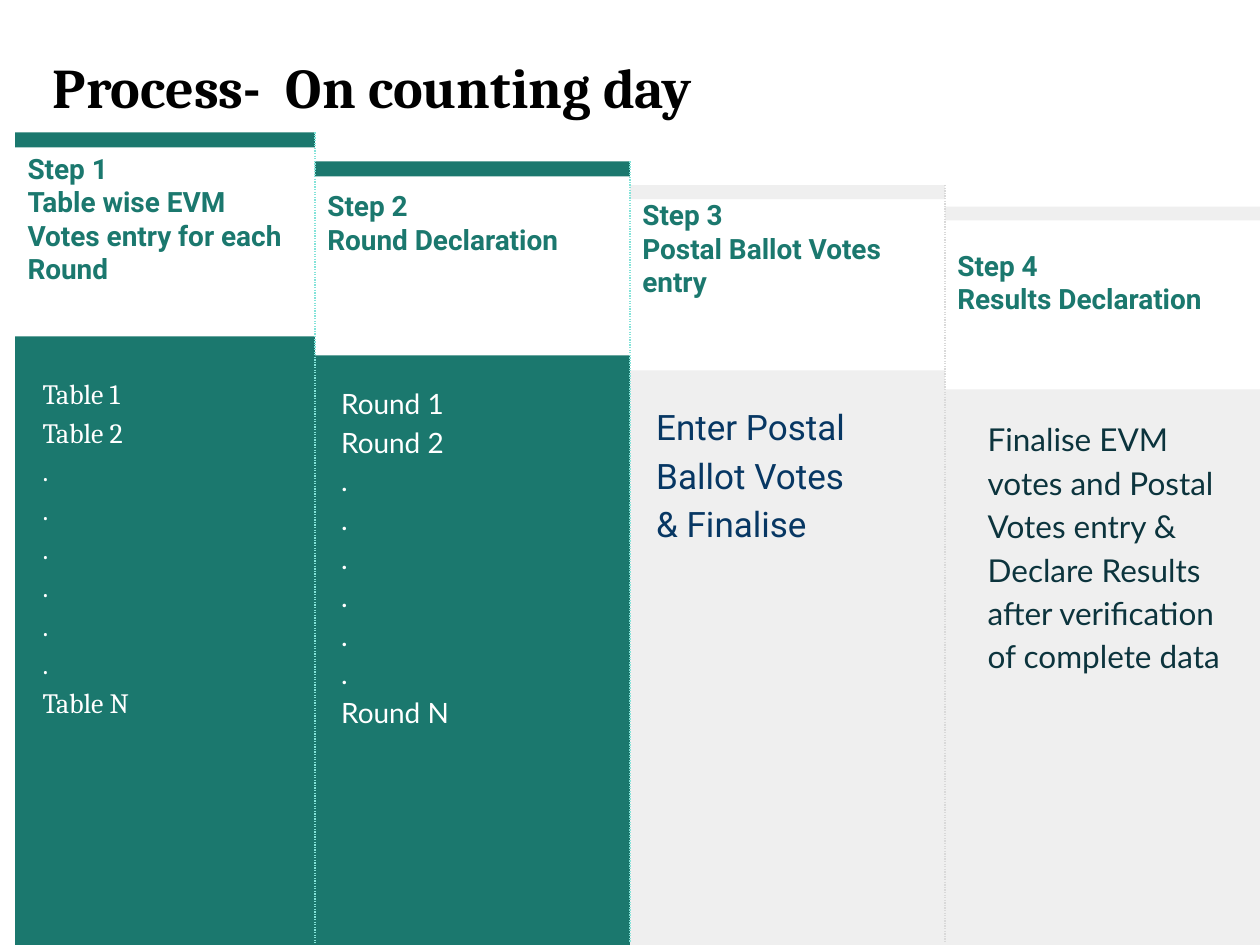
import pptx
import pptx.util
import pptx.dml.color
import pptx.enum.dml
import pptx.enum.shapes
import pptx.enum.text
import pptx.oxml.ns
import lxml.etree

WIDTH, HEIGHT = 10, 7.5
COLORS = {
    "teal": "1B786E", "grey": "EFEFEF", "mint": "83E3D9", "silver": "D9D9D9",
    "white": "FFFFFF", "navy": "073763", "dark": "0C343D", "black": "000000",
}
TITLE = "Process-  On counting day"
DOTS = ["."] * 6

STEPS = [
    {"heading": ["Step 1", "Table wise EVM Votes entry for each Round"],
     "body": ["Table 1", "Table 2", *DOTS, "Table N"],
     "font": "Cambria", "size": 16, "color": "white", "fill": "teal", "rule": "mint",
     "bar_top": 1.05, "bar_height": 0.12, "heading_top": 1.1, "heading_height": 1.47,
     "panel_top": 2.67, "body_top": 2.85, "body_height": 4.26,
     "inset": 0.12, "body_width": 2.15},
    {"heading": ["Step 2", "Round Declaration"],
     "body": ["Round 1", "Round 2", *DOTS, "Round N"],
     "font": "Lato", "size": 16, "color": "white", "fill": "teal", "rule": "mint",
     "bar_top": 1.28, "bar_height": 0.12, "heading_top": 1.4, "heading_height": 0.77,
     "panel_top": 2.82, "body_top": 2.93, "body_height": 4.42,
     "inset": 0.11, "body_width": 2.31},
    {"heading": ["Step 3", "Postal Ballot Votes entry"],
     "body": ["Enter Postal Ballot Votes", "& Finalise"],
     "font": "Roboto", "size": 20, "color": "navy", "fill": "grey", "rule": "silver",
     "bar_top": 1.47, "bar_height": 0.11, "heading_top": 1.47, "heading_height": 1.47,
     "panel_top": 2.94, "body_top": 3.07, "body_height": 3.97,
     "inset": 0.11, "body_width": 2.37},
    {"heading": ["Step 4", "Results Declaration"],
     "body": ["Finalise EVM votes and Postal Votes entry & Declare Results "
              "after verification of complete data"],
     "font": "Lato", "size": 18, "color": "dark", "fill": "grey", "rule": None,
     "bar_top": 1.64, "bar_height": 0.11, "heading_top": 1.87, "heading_height": 1.22,
     "panel_top": 3.09, "body_top": 3.19, "body_height": 4.01,
     "inset": 0.24, "body_width": 2.11},
]
COLUMN = WIDTH / len(STEPS)
LEFT_MARGIN = 0.12
RULE_BOTTOM = 7.48


def color(name):
    return pptx.dml.color.RGBColor.from_string(COLORS[name])


def inches(*lengths):
    return [pptx.util.Inches(length) for length in lengths]


def add_band(page, left, top, width, height, fill):
    band = page.shapes.add_shape(
        pptx.enum.shapes.MSO_SHAPE.RECTANGLE, *inches(left, top, width, height))
    band.shadow.inherit = False
    band.fill.solid()
    band.fill.fore_color.rgb = color(fill)
    band.line.fill.background()


def add_text(page, area, lines, font, size, ink, bold=False, spacing=1.0, margin=0.1,
             anchor=pptx.enum.text.MSO_ANCHOR.TOP):
    frame = page.shapes.add_textbox(*inches(*area)).text_frame
    frame.word_wrap = True
    frame.vertical_anchor = anchor
    frame.margin_left = frame.margin_right = pptx.util.Inches(margin)
    frame.margin_top = frame.margin_bottom = pptx.util.Inches(margin)
    frame.text = "\n".join(lines)
    for paragraph in frame.paragraphs:
        paragraph.line_spacing = spacing
        for span in paragraph.runs:
            span.font.name = font
            span.font.size = pptx.util.Pt(size)
            span.font.bold = bold
            span.font.color.rgb = color(ink)


def add_rule(page, x, top, ink):
    rule = page.shapes.add_connector(
        pptx.enum.shapes.MSO_CONNECTOR.STRAIGHT, *inches(x, top, x, RULE_BOTTOM))
    rule.line.color.rgb = color(ink)
    rule.line.width = pptx.util.Pt(0.75)
    rule.line.dash_style = pptx.enum.dml.MSO_LINE.ROUND_DOT
    lxml.etree.SubElement(rule.element.spPr, pptx.oxml.ns.qn("a:effectLst"))


def add_step(page, index, step):
    left = max(index * COLUMN, LEFT_MARGIN)
    right = (index + 1) * COLUMN
    width = right - left
    add_band(page, left, step["panel_top"], width, HEIGHT - step["panel_top"], step["fill"])
    add_band(page, left, step["bar_top"], width, step["bar_height"], step["fill"])
    add_text(page, (left, step["heading_top"], width, step["heading_height"]),
             step["heading"], "Roboto", 16, "teal", bold=True)
    add_text(page, (left + step["inset"], step["body_top"],
                    step["body_width"], step["body_height"]),
             step["body"], step["font"], step["size"], step["color"], spacing=1.15)
    if step["rule"]:
        add_rule(page, right, step["bar_top"], step["rule"])


def main():
    deck = pptx.Presentation()
    deck.slide_width, deck.slide_height = inches(WIDTH, HEIGHT)
    page = deck.slides.add_slide(deck.slide_layouts[6])
    for index, step in reversed(list(enumerate(STEPS))):
        add_step(page, index, step)
    add_text(page, (0.42, 0.49, 8.53, 0.46), [TITLE], "Cambria", 32, "black", bold=True,
             spacing=0.8, margin=0, anchor=pptx.enum.text.MSO_ANCHOR.BOTTOM)
    deck.save("out.pptx")


if __name__ == "__main__":
    main()
